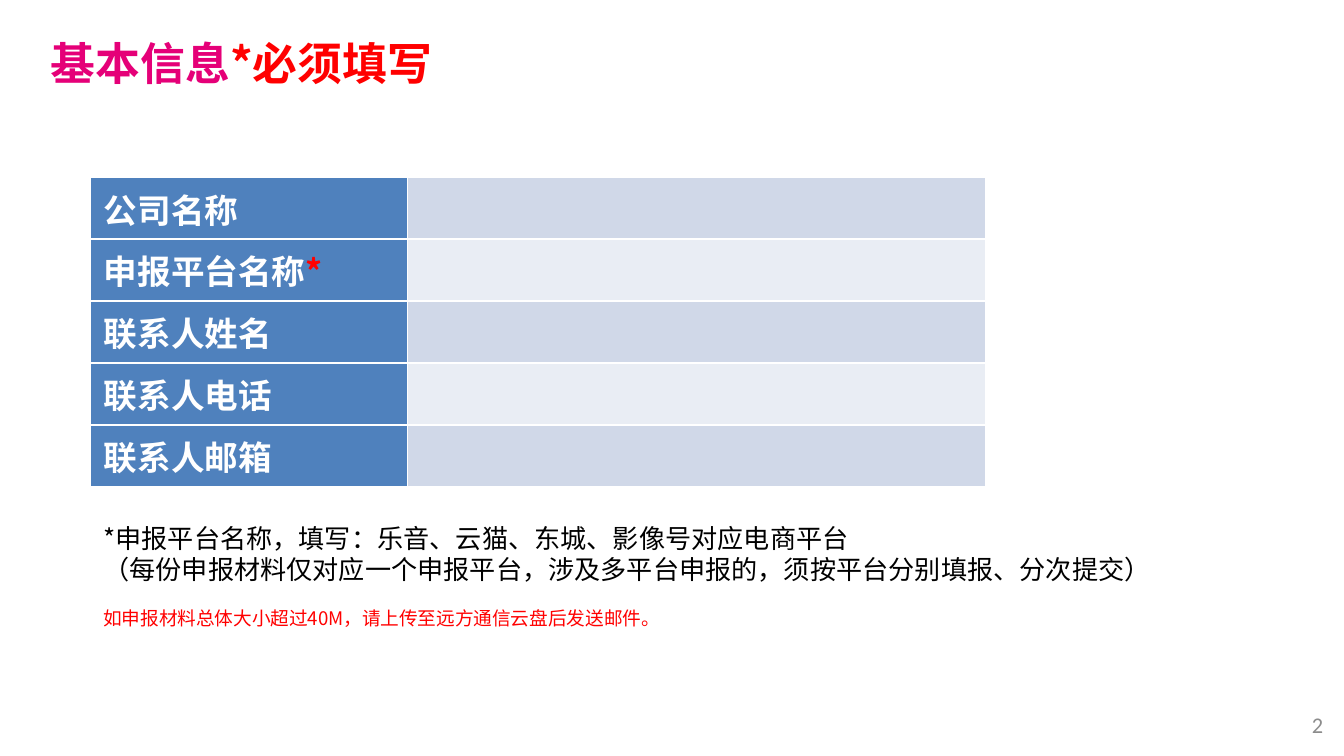
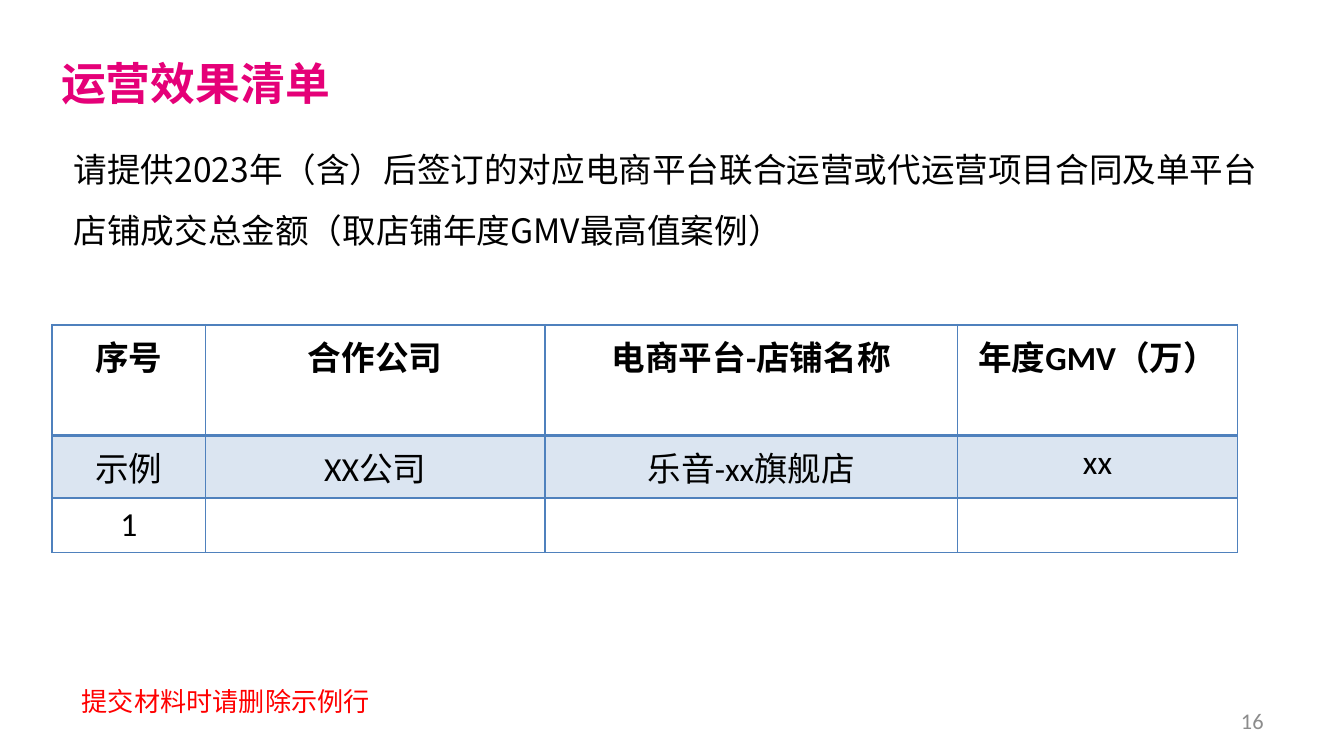
import pptx
import pptx.util
import pptx.dml.color
import pptx.enum.text
import pptx.oxml.ns
import lxml.etree
from dataclasses import dataclass

Pt = pptx.util.Pt
RGB = pptx.dml.color.RGBColor.from_string
qn = pptx.oxml.ns.qn
ALIGN = pptx.enum.text.PP_ALIGN
ANCHOR = pptx.enum.text.MSO_ANCHOR
AUTO_SIZE = pptx.enum.text.MSO_AUTO_SIZE


@dataclass(frozen=True)
class Theme:
    cjk: str = "Noto Sans CJK SC"
    latin: str = "Calibri"
    magenta: str = "E50078"
    red: str = "FF0000"
    black: str = "000000"
    white: str = "FFFFFF"
    grey: str = "8C8C8C"
    blue: str = "4F81BD"
    band_dark: str = "D0D8E8"
    band_light: str = "E9EDF4"
    title: float = 24
    table: float = 18
    lead: float = 18
    note: float = 14
    page: float = 12
    small: float = 10


theme = Theme()


def add_run(paragraph, text, size, color, font=theme.cjk, bold=False):
    run = paragraph.add_run()
    run.text = text
    run.font.size = Pt(size)
    run.font.bold = bold
    run.font.name = font
    run.font.color.rgb = RGB(color)
    east_asian = lxml.etree.SubElement(run.font._element, qn("a:ea"))
    east_asian.set("typeface", theme.cjk)


def style_cell(cell, fill, border, bottom=1, opacity=100):
    if fill:
        cell.fill.solid()
        cell.fill.fore_color.rgb = RGB(fill)
    else:
        cell.fill.background()
    properties = cell._tc.get_or_add_tcPr()
    if opacity < 100:
        shade = properties.find(".//" + qn("a:srgbClr"))
        lxml.etree.SubElement(shade, qn("a:alpha")).set("val", str(opacity * 1000))
    for index, side in enumerate("LRTB"):
        width = bottom if side == "B" else 1
        line = lxml.etree.Element(qn("a:ln" + side), w=str(Pt(width)))
        solid = lxml.etree.SubElement(line, qn("a:solidFill"))
        lxml.etree.SubElement(solid, qn("a:srgbClr")).set("val", border)
        properties.insert(index, line)


deck = pptx.Presentation()
deck.slide_width, deck.slide_height = Pt(720), Pt(405)
info, results = [deck.slides.add_slide(deck.slide_layouts[5]) for _ in range(2)]

headings = [
    (info, (20, 13.5, 284, 45), [("基本信息", theme.magenta), ("*必须填写", theme.red)]),
    (results, (25.5, 24, 380, 45), [("运营效果清单", theme.magenta)]),
]
for slide, place, parts in headings:
    title = slide.shapes.title
    title.left, title.top, title.width, title.height = map(Pt, place)
    frame = title.text_frame
    frame.auto_size = AUTO_SIZE.NONE
    frame.vertical_anchor = ANCHOR.TOP
    paragraph = frame.paragraphs[0]
    paragraph.alignment = ALIGN.LEFT
    paragraph.line_spacing = Pt(31)
    for text, color in parts:
        add_run(paragraph, text, theme.title, color, bold=True)

notes = [
    (info, (48.3, 276.3, 629, 66), [
        ("*申报平台名称，填写：乐音、云猫、东城、影像号对应电商平台", theme.note, theme.black, 16.6, 0),
        ("（每份申报材料仅对应一个申报平台，涉及多平台申报的，须按平台分别填报、分次提交）",
         theme.note, theme.black, 16.6, 0),
        ("如申报材料总体大小超过40M，请上传至远方通信云盘后发送邮件。", theme.small, theme.red, 12, 12),
    ]),
    (results, (32.4, 65, 652.3, 81), [
        ("请提供2023年（含）后签订的对应电商平台联合运营或代运营项目合同及单平台店铺成交总金额"
         "（取店铺年度GMV最高值案例）", theme.lead, theme.black, 32.7, 0),
    ]),
    (results, (36.7, 355, 284, 45), [
        ("提交材料时请删除示例行", theme.note, theme.red, 25.4, 0),
    ]),
]
for slide, place, lines in notes:
    frame = slide.shapes.add_textbox(*map(Pt, place)).text_frame
    frame.word_wrap = True
    for index, (text, size, color, leading, gap) in enumerate(lines):
        paragraph = frame.add_paragraph() if index else frame.paragraphs[0]
        paragraph.line_spacing = Pt(leading)
        if gap:
            paragraph.space_before = Pt(gap)
        add_run(paragraph, text, size, color)

fields = ["公司名称", "申报平台名称", "联系人姓名", "联系人电话", "联系人邮箱"]
field_height = 33.2
form = info.shapes.add_table(
    len(fields), 2, Pt(48.5), Pt(95), Pt(479.5), Pt(field_height * len(fields))).table
form.first_row, form.first_col, form.horz_banding = False, True, False
form.columns[0].width, form.columns[1].width = Pt(169.75), Pt(309.75)
for index, field in enumerate(fields):
    form.rows[index].height = Pt(field_height)
    label, entry = form.rows[index].cells
    paragraph = label.text_frame.paragraphs[0]
    add_run(paragraph, field, theme.table, theme.white, bold=True)
    if field == "申报平台名称":
        add_run(paragraph, "*", theme.table, theme.red, bold=True)
    style_cell(label, theme.blue, theme.white)
    style_cell(entry, theme.band_light if index % 2 else theme.band_dark, theme.white)

cases = [
    ["序号", "合作公司", "电商平台-店铺名称", "年度GMV（万）"],
    ["示例", "XX公司", "乐音-xx旗舰店", "xx"],
    ["1", "", "", ""],
]
case_widths = [82, 182, 221, 150]
case_heights = [59.5, 33.4, 29.2]
case_table = results.shapes.add_table(
    len(cases), len(case_widths), Pt(28), Pt(174),
    Pt(sum(case_widths)), Pt(sum(case_heights))).table
case_table.horz_banding = False
for column, width in zip(case_table.columns, case_widths):
    column.width = Pt(width)
for index, (values, height) in enumerate(zip(cases, case_heights)):
    case_table.rows[index].height = Pt(height)
    for cell, value in zip(case_table.rows[index].cells, values):
        paragraph = cell.text_frame.paragraphs[0]
        paragraph.alignment = ALIGN.CENTER
        if value:
            add_run(paragraph, value, theme.table, theme.black, theme.latin, index == 0)
        style_cell(cell, theme.blue if index == 1 else None, theme.blue,
                   bottom=2 if index == 0 else 1, opacity=20 if index == 1 else 100)

pages = [(info, "2", (692, 378, 24, 20)), (results, "16", (516, 375, 168, 22))]
for slide, number, place in pages:
    frame = slide.shapes.add_textbox(*map(Pt, place)).text_frame
    frame.word_wrap = True
    frame.vertical_anchor = ANCHOR.MIDDLE
    paragraph = frame.paragraphs[0]
    paragraph.alignment = ALIGN.RIGHT
    add_run(paragraph, number, theme.page, theme.grey, theme.latin)

deck.save("out.pptx")
